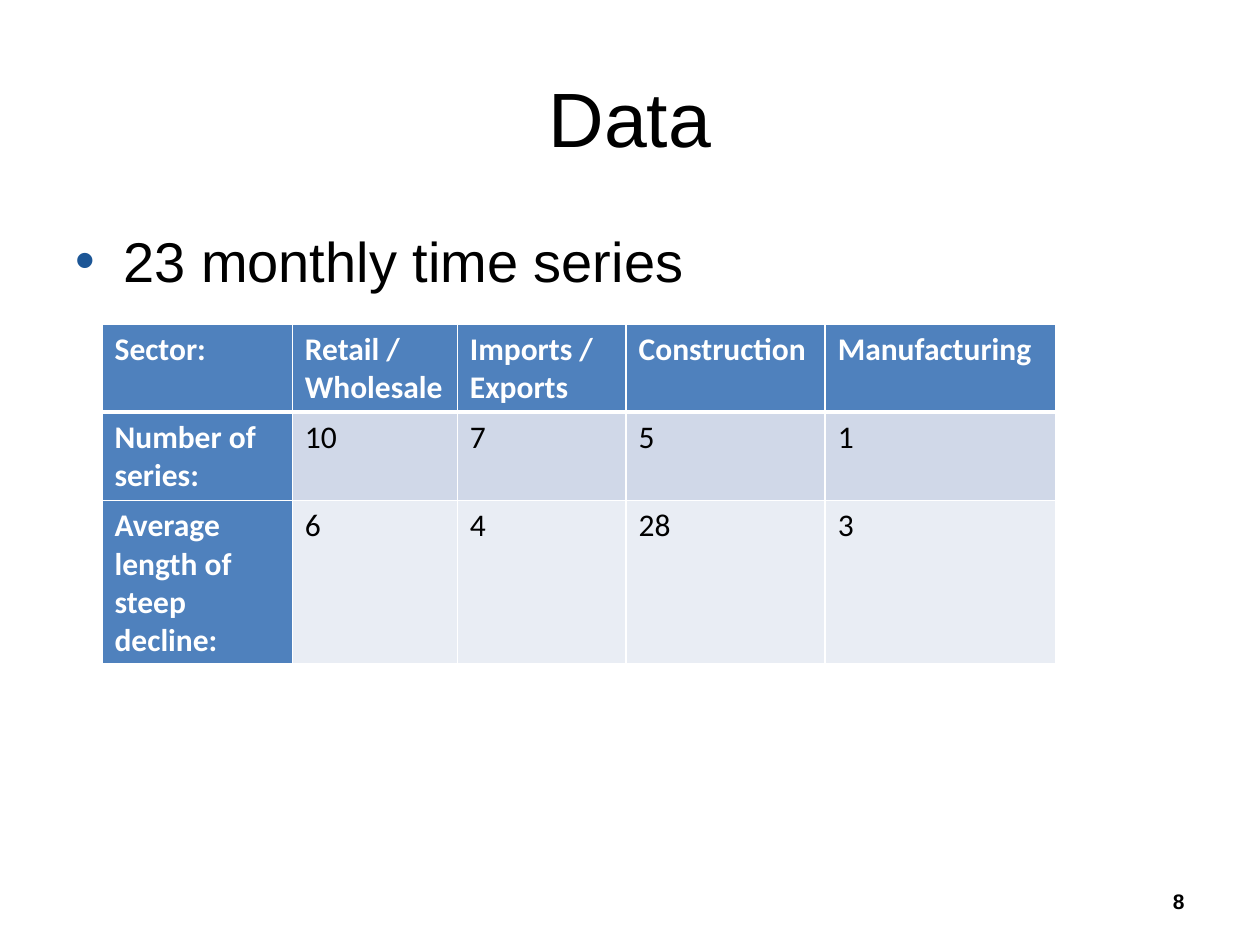
"""Build the slide that summarises the monthly time series by sector."""
from lxml import etree
from pptx import Presentation
from pptx.dml.color import RGBColor
from pptx.enum import text
from pptx.oxml import ns
from pptx.util import Inches, Pt


def style(paragraph, size, font, color="000000", bold=False, align=text.PP_ALIGN.LEFT):
    paragraph.alignment = align
    for run in paragraph.runs:
        run.font.size = Pt(size)
        run.font.name = font
        run.font.bold = bold
        run.font.color.rgb = RGBColor.from_string(color)


def add_border(cell, side, width):
    line = etree.SubElement(cell._tc.get_or_add_tcPr(), ns.qn(f"a:{side}"), w=str(Pt(width)))
    fill = etree.SubElement(line, ns.qn("a:solidFill"))
    etree.SubElement(fill, ns.qn("a:srgbClr"), val="FFFFFF")


presentation = Presentation()
presentation.slide_width = Inches(10)
presentation.slide_height = Inches(7.5)
slide = presentation.slides.add_slide(presentation.slide_layouts[5])

title = slide.shapes.title
title.left, title.top, title.width, title.height = map(Inches, (0.5, 0.3, 9, 1.25))
title.text_frame.text = "Data"
title.text_frame.vertical_anchor = text.MSO_ANCHOR.MIDDLE
style(title.text_frame.paragraphs[0], 44, "Arial", align=text.PP_ALIGN.CENTER)

body = slide.shapes.add_textbox(Inches(0.5), Inches(1.75), Inches(9), Inches(4.95))
body.text_frame.word_wrap = True
paragraph = body.text_frame.paragraphs[0]
paragraph.text = "23 monthly time series"
properties = paragraph._p.get_or_add_pPr()
properties.set("marL", str(Inches(0.38)))
properties.set("indent", str(Inches(-0.38)))
bullet_color = etree.SubElement(properties, ns.qn("a:buClr"))
etree.SubElement(bullet_color, ns.qn("a:srgbClr"), val="1C5696")
etree.SubElement(properties, ns.qn("a:buFont"), typeface="Arial")
etree.SubElement(properties, ns.qn("a:buChar"), char="•")
style(paragraph, 32, "Arial")

rows = [
    ["Sector:", "Retail / Wholesale", "Imports / Exports", "Construction", "Manufacturing"],
    ["Number of series:", "10", "7", "5", "1"],
    ["Average length of steep decline:", "6", "4", "28", "3"],
]
column_widths = [1.51, 1.31, 1.34, 1.58, 1.83]
row_heights = [0.7, 0.7, 1.3]
header_fill = "4F81BD"
row_fills = [header_fill, "D0D8E8", "E9EDF4"]

table = slide.shapes.add_table(
    len(rows), len(column_widths), Inches(0.81), Inches(2.57),
    Inches(sum(column_widths)), Inches(sum(row_heights))).table
table.first_col = True
for column, width in zip(table.columns, column_widths):
    column.width = Inches(width)
for row_index, values in enumerate(rows):
    table.rows[row_index].height = Inches(row_heights[row_index])
    for column_index, value in enumerate(values):
        cell = table.cell(row_index, column_index)
        is_header = row_index == 0 or column_index == 0
        cell.text = value
        style(cell.text_frame.paragraphs[0], 18, "Calibri",
              "FFFFFF" if is_header else "000000", is_header)
        for side in ("lnL", "lnR"):
            add_border(cell, side, 1)
        add_border(cell, "lnT", 3 if row_index == 1 else 1)
        add_border(cell, "lnB", 3 if row_index == 0 else 1)
        cell.fill.solid()
        cell.fill.fore_color.rgb = RGBColor.from_string(
            header_fill if is_header else row_fills[row_index])

page_number = slide.shapes.add_textbox(Inches(7.17), Inches(6.95), Inches(2.33), Inches(0.4))
page_number.text_frame.word_wrap = True
page_number.text_frame.vertical_anchor = text.MSO_ANCHOR.MIDDLE
page_number.text_frame.text = "8"
style(page_number.text_frame.paragraphs[0], 12, "Arial", bold=True, align=text.PP_ALIGN.RIGHT)

presentation.save("out.pptx")
